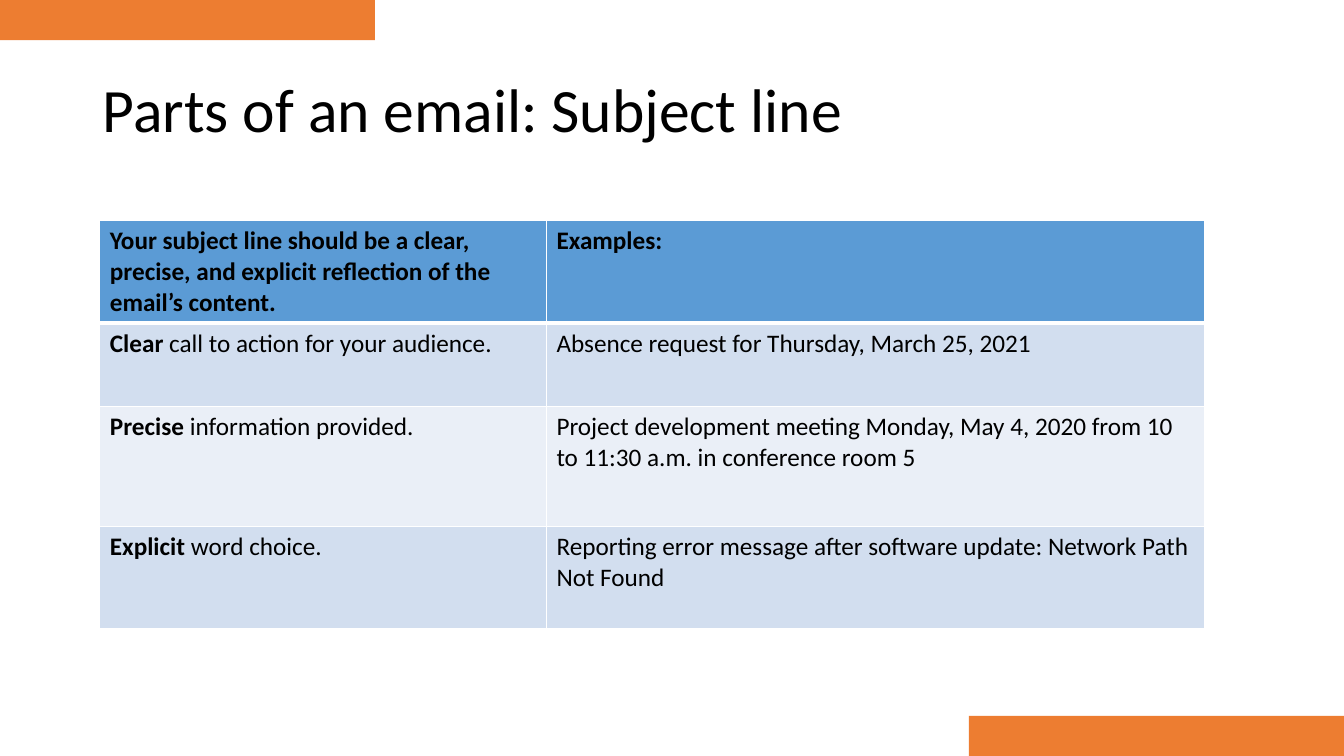
from lxml.etree import SubElement
from pptx import Presentation
from pptx.dml.color import RGBColor as Rgb
from pptx.enum.shapes import MSO_SHAPE as Shape
from pptx.enum.text import MSO_ANCHOR as Anchor, PP_ALIGN as Align
from pptx.oxml.ns import qn
from pptx.util import Inches, Pt

WIDE, HIGH = Inches(13.33), Inches(7.5)
HUES = {"ink": "000000", "bar": "ED7D31", "head": "5B9BD5",
        "odd": "D2DEEF", "even": "EAEFF7", "rule": "FFFFFF"}
COLS = (4.43, 6.53)
ROWS = (1.01, 0.83, 1.19, 1.01)
CELLS = (
    (("Your subject line should be a clear, precise, and explicit reflection of the email’s content.", ""),
     ("Examples:", "")),
    (("Clear", " call to action for your audience."),
     ("", "Absence request for Thursday, March 25, 2021")),
    (("Precise", " information provided."),
     ("", "Project development meeting Monday, May 4, 2020 from 10 to 11:30 a.m. in conference room 5")),
    (("Explicit", " word choice."),
     ("", "Reporting error message after software update: Network Path Not Found")),
)


def paint(item, hue):
    item.fill.solid()
    item.fill.fore_color.rgb = Rgb.from_string(HUES[hue])


def write(para, text, size=18, bold=False, hue="ink"):
    run = para.add_run()
    run.text = text
    font = run.font
    font.name, font.size, font.bold = "Calibri", Pt(size), bold
    font.color.rgb = Rgb.from_string(HUES[hue])


def place(item, left, top, wide, high):
    item.left, item.top = int(left * WIDE), int(top * HIGH)
    item.width, item.height = int(wide * WIDE), int(high * HIGH)


def add_title(slide, text):
    title = slide.shapes.title
    place(title, 0.069, 0.053, 0.863, 0.193)
    frame = title.text_frame
    frame.word_wrap = True
    frame.vertical_anchor = Anchor.MIDDLE
    para = frame.paragraphs[0]
    para.alignment, para.line_spacing = Align.LEFT, 0.9
    write(para, text, size=44)


def add_bar(slide, left, top):
    bar = slide.shapes.add_shape(Shape.RECTANGLE, 0, 0, 0, 0)
    place(bar, left, top, 0.279, 0.053)
    bar.shadow.inherit = False
    paint(bar, "bar")
    bar.line.fill.background()


def edge(cell, **sides):
    props = cell._tc.get_or_add_tcPr()
    for side, width in sides.items():
        line = SubElement(props, qn(f"a:ln{side}"), w=str(Pt(width)))
        fill = SubElement(line, qn("a:solidFill"))
        SubElement(fill, qn("a:srgbClr"), val=HUES["rule"])


def add_grid(slide):
    grid = slide.shapes.add_table(
        len(ROWS), len(COLS), Inches(0.99), Inches(2.19),
        Inches(sum(COLS)), Inches(sum(ROWS))).table
    for col, wide in zip(grid.columns, COLS):
        col.width = Inches(wide)
    for row, high in zip(grid.rows, ROWS):
        row.height = Inches(high)
    for r, line in enumerate(CELLS):
        hue = "head" if r == 0 else "odd" if r % 2 else "even"
        for c, (strong, plain) in enumerate(line):
            cell = grid.cell(r, c)
            edge(cell, L=1, R=1, T=3 if r == 1 else 1, B=3 if r == 0 else 1)
            paint(cell, hue)
            para = cell.text_frame.paragraphs[0]
            for text, bold in ((strong, True), (plain, False)):
                if text:
                    write(para, text, bold=bold)


def main():
    deck = Presentation()
    deck.slide_width, deck.slide_height = WIDE, HIGH
    slide = deck.slides.add_slide(deck.slide_layouts[5])
    add_title(slide, "Parts of an email: Subject line")
    add_grid(slide)
    add_bar(slide, 0, 0)
    add_bar(slide, 0.721, 0.947)
    deck.save("out.pptx")


if __name__ == "__main__":
    main()
